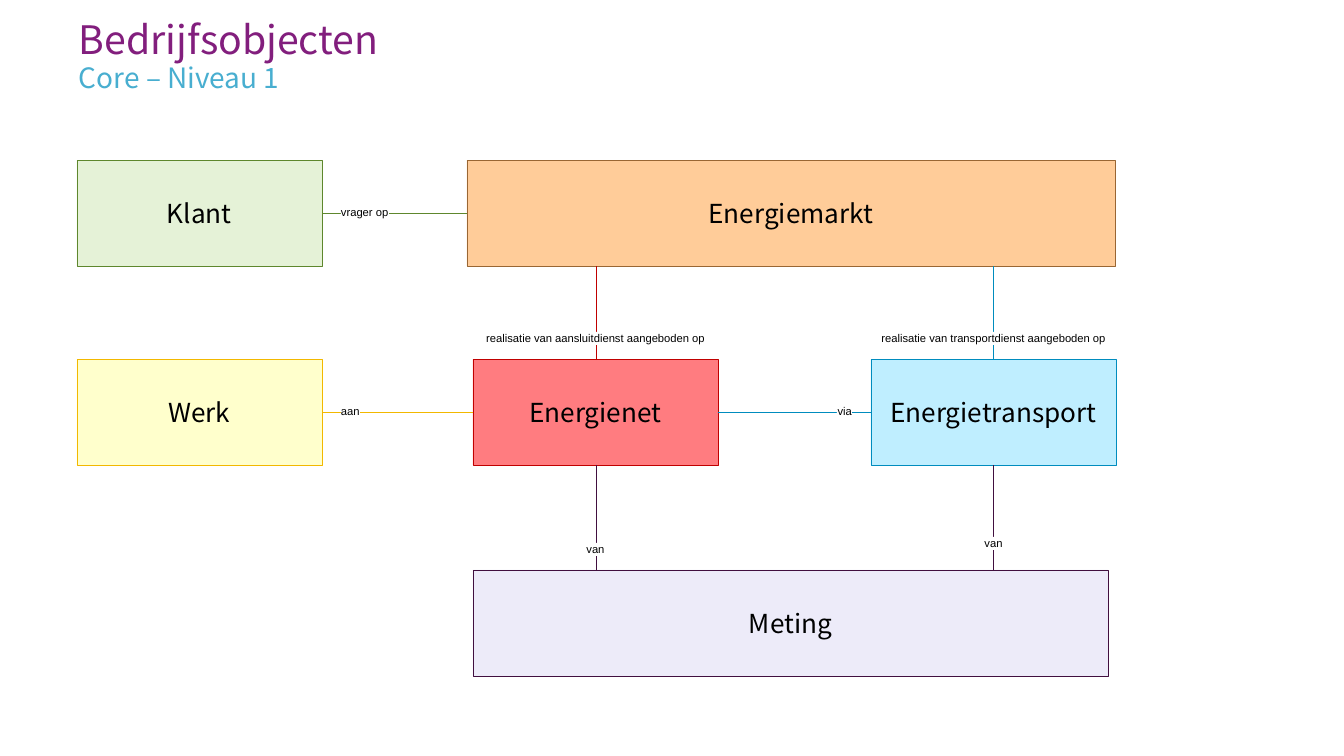
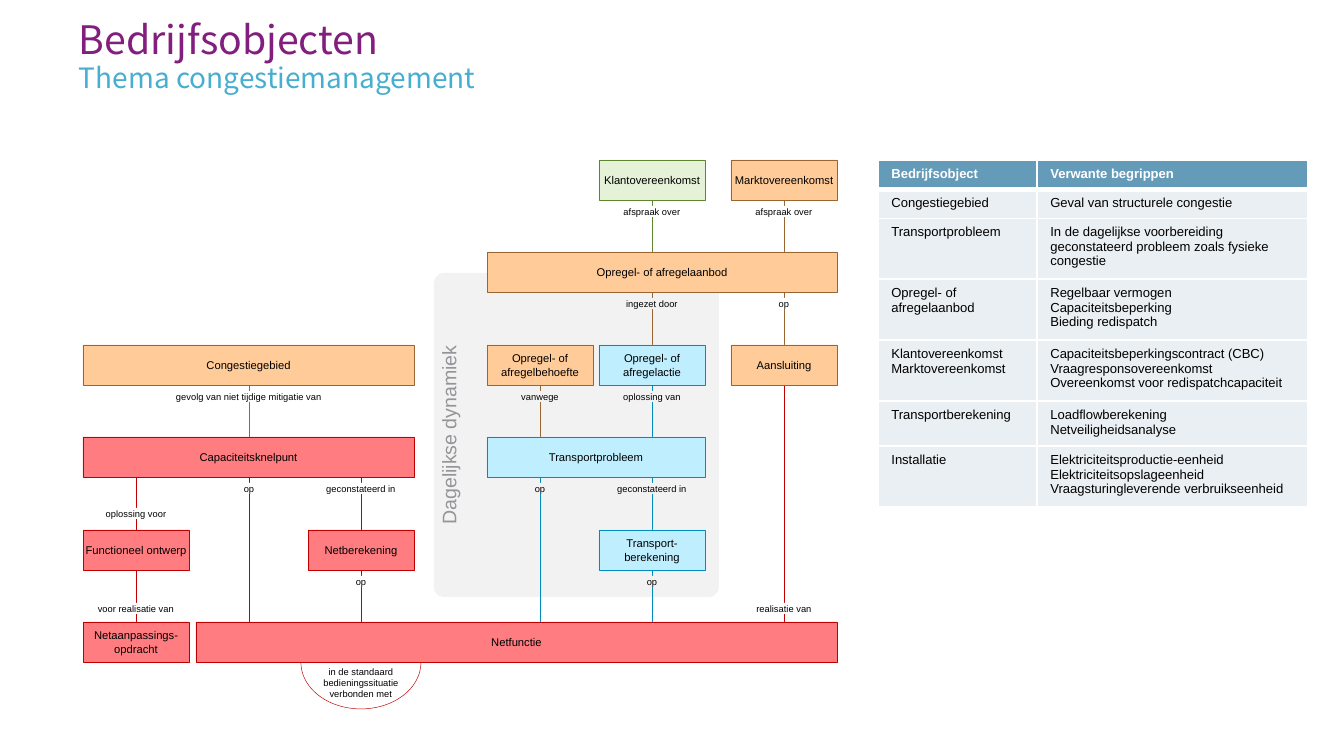
from pptx import Presentation
from pptx import util as u
from pptx.dml.color import RGBColor
from pptx.enum import shapes, text
from pptx.oxml import parse_xml
from pptx.oxml.ns import nsdecls

SCALE = 9144000 / 1344
HEAD_FONT, BODY_FONT = "Noto Sans CJK TC", "Arial"
COLOURS = {
    "white": "FFFFFF", "black": "000000", "purple": "821E7D", "sky": "48AED0",
    "panel": "F2F2F2", "grey": "939598", "header": "649BB9", "cell": "EAEFF3",
    "klant": "E5F2D7", "klant_line": "5E872D",
    "markt": "FFCC99", "markt_line": "996633",
    "net": "FF7C80", "net_line": "C00000",
    "transport": "BFEEFF", "transport_line": "008CBE",
    "meting": "EDEBF9", "meting_line": "410F3F",
    "werk": "FFFFCC", "werk_line": "F2B800",
}
LEFT, CENTER, RIGHT = text.PP_ALIGN.LEFT, text.PP_ALIGN.CENTER, text.PP_ALIGN.RIGHT
TOP, MIDDLE, BOTTOM = text.MSO_ANCHOR.TOP, text.MSO_ANCHOR.MIDDLE, text.MSO_ANCHOR.BOTTOM


def px(value):
    return u.Emu(round(value * SCALE))


def rgb(name):
    return RGBColor.from_string(COLOURS[name])


def assign(target, values):
    for name, value in values.items():
        setattr(target, name, value)


def frame_format(across=0, down=0, anchor=TOP, wrap=True, grow=False):
    fit = text.MSO_AUTO_SIZE
    return {
        "word_wrap": wrap,
        "auto_size": fit.SHAPE_TO_FIT_TEXT if grow else fit.NONE,
        "vertical_anchor": anchor,
        "margin_left": px(across), "margin_right": px(across),
        "margin_top": px(down), "margin_bottom": px(down),
    }


class Diagram:
    """Draws titled object diagrams in one house style."""

    def __init__(self):
        self.deck = Presentation()
        assign(self.deck, {"slide_width": px(1344), "slide_height": px(756)})
        self.page = None

    def new_page(self, title, subtitle):
        self.page = self.deck.slides.add_slide(self.deck.slide_layouts[6])
        self.heading(title, 23, 1297, 52, 21, "purple", u.Pt(21))
        self.heading(subtitle, 54, 1043, 30, 15, "sky", 1.2)

    def fill_text(self, frame, lines, size, font=BODY_FONT, colour="black",
                  bold=False, **layout):
        for index, line in enumerate(lines):
            para = frame.add_paragraph() if index else frame.paragraphs[0]
            assign(para, layout)
            span = para.add_run()
            span.text = line
            assign(span.font, {"name": font, "size": u.Pt(size), "bold": bold})
            span.font.color.rgb = rgb(colour)

    def heading(self, words, top, width, height, size, colour, spacing):
        box = self.page.shapes.add_textbox(px(79), px(top), px(width), px(height))
        assign(box.text_frame, frame_format())
        self.fill_text(box.text_frame, [words], size, HEAD_FONT, colour,
                       line_spacing=spacing)

    def shape(self, kind, left, top, width, height, fill=None, line=None):
        box = self.page.shapes.add_shape(
            kind, px(left), px(top), px(width), px(height))
        box.shadow.inherit = False
        if fill:
            box.fill.solid()
            box.fill.fore_color.rgb = rgb(fill)
        else:
            box.fill.background()
        if line:
            box.line.color.rgb = rgb(line)
            box.line.width = u.Pt(0.25)
        else:
            box.line.fill.background()
        return box

    def block(self, words, left, top, width, height, tone, size=6,
              font=BODY_FONT, margins=(1, 1)):
        box = self.shape(shapes.MSO_SHAPE.RECTANGLE, left, top, width, height,
                         tone, tone + "_line")
        assign(box.text_frame, frame_format(*margins, anchor=MIDDLE))
        self.fill_text(box.text_frame, [words], size, font, alignment=CENTER)

    def label(self, words, left, top, width, height, size, fill="white",
              align=CENTER, anchor=MIDDLE, wrap=True):
        box = self.shape(shapes.MSO_SHAPE.RECTANGLE, left, top, width, height, fill)
        assign(box.text_frame, frame_format(anchor=anchor, wrap=wrap, grow=True))
        self.fill_text(box.text_frame, [words], size, alignment=align)

    def link(self, x1, y1, x2, y2, tone):
        line = self.page.shapes.add_connector(
            shapes.MSO_CONNECTOR.STRAIGHT, px(x1), px(y1), px(x2), px(y2))
        line.line.color.rgb = rgb(tone + "_line")
        line.line.width = u.Pt(0.25)
        line.element.spPr.append(parse_xml(f"<a:effectLst {nsdecls('a')}/>"))

    def panel(self, words, left, top, width, height):
        box = self.shape(shapes.MSO_SHAPE.ROUNDED_RECTANGLE,
                         left, top, width, height, "panel")
        box.adjustments[0] = 0.034
        assign(box.text_frame, frame_format())
        box.element.txBody.bodyPr.set("vert", "vert270")
        self.fill_text(box.text_frame, [words], 10.5, colour="grey",
                       alignment=CENTER)

    def loop(self, words, left, top, width, height, line):
        box = self.shape(shapes.MSO_SHAPE.ARC, left, top, width, height, line=line)
        for index, angle in enumerate((212.73, 109.39)):
            box.adjustments[index] = angle
        assign(box.text_frame, frame_format(13, 7, MIDDLE))
        self.fill_text(box.text_frame, [words], 5, alignment=CENTER)

    def table(self, left, top, widths, rows):
        heights = [14 + 47 * count // 3 for count, *_ in rows]
        grid = self.page.shapes.add_table(
            len(rows), len(widths), px(left), px(top),
            px(sum(widths)), px(sum(heights))).table
        for column, width in zip(grid.columns, widths):
            column.width = px(width)
        for index, (_, *cells) in enumerate(rows):
            grid.rows[index].height = px(heights[index])
            for column, lines in enumerate(cells):
                self.cell(grid.cell(index, column), lines, index)

    def cell(self, cell, lines, index):
        header = index == 0
        for side in "LRTB":
            thick = (index, side) in ((0, "B"), (1, "T"))
            cell._tc.get_or_add_tcPr().append(parse_xml(
                f'<a:ln{side} {nsdecls("a")} w="{u.Pt(3 if thick else 1)}">'
                f'<a:solidFill><a:srgbClr val="{COLOURS["white"]}"/></a:solidFill>'
                f'</a:ln{side}>'))
        cell.fill.solid()
        cell.fill.fore_color.rgb = rgb("header" if header else "cell")
        self.fill_text(cell.text_frame, lines, 7,
                       colour="white" if header else "black", bold=header)


def core_page(diagram):
    diagram.new_page("Bedrijfsobjecten", "Core – Niveau 1")
    width, height = 245, 106
    left, middle, right = 77, 473, 871
    market, work, measure = 160, 359, 570
    for words, x, y, wide, tone in (
        ("Klant", left, market, width, "klant"),
        ("Energienet", middle, work, width, "net"),
        ("Energietransport", right, work, width, "transport"),
        ("Meting", middle, measure, 635, "meting"),
        ("Werk", left, work, width, "werk"),
        ("Energiemarkt", 467, market, 648, "markt"),
    ):
        diagram.block(words, x, y, wide, height, tone, 14, HEAD_FONT, (13, 7))
    for x, tone in ((middle + 123, "net"), (right + 122, "transport")):
        diagram.link(x, work, x, market + height, tone)
        diagram.link(x, work + height, x, measure, "meting")
    for x1, x2, y, tone in (
        (467, left + width, market, "klant"),
        (right, middle + width, work, "transport"),
        (left + width, middle, work, "werk"),
    ):
        diagram.link(x1, y + height // 2, x2, y + height // 2, tone)
    for words, x, y, wide, align in (
        ("aan", 341, 405, 19, LEFT),
        ("via", 837, 405, 15, RIGHT),
        ("vrager op", 341, 206, 48, LEFT),
        ("realisatie van transportdienst aangeboden op", right, 332, width, CENTER),
        ("realisatie van aansluitdienst aangeboden op", middle, 332, width, CENTER),
        ("van", middle, 543, width, CENTER),
        ("van", right, 537, width, CENTER),
    ):
        diagram.label(words, x, y, wide, 13, 6, align=align, anchor=BOTTOM,
                      wrap=align == CENTER)


def congestion_page(diagram):
    diagram.new_page("Bedrijfsobjecten", "Thema congestiemanagement")
    columns = [83, 196, 308, 487, 599, 731]
    rows = [160 + 185 * row // 2 for row in range(6)]
    width, height = 106, 40
    diagram.panel("Dagelijkse dynamiek", 434, 273, 285, 324)
    diagram.loop("in de standaard bedieningssituatie verbonden met",
                 301, 616, 120, 93, "net_line")
    for column, start, end, tone in (
        (3, 3, 5, "transport"), (4, 1, 2, "markt"), (3, 2, 3, "markt"),
        (5, 0, 1, "markt"), (2, 3, 4, "net"), (4, 0, 1, "klant"),
        (5, 1, 2, "markt"), (1, 2, 3, "markt"), (4, 3, 4, "transport"),
        (4, 2, 3, "transport"), (1, 3, 5, "net"), (5, 2, 5, "net"),
        (2, 4, 5, "net"), (4, 4, 5, "transport"), (0, 3, 4, "net"),
        (0, 4, 5, "net"),
    ):
        x = columns[column] + width // 2
        diagram.link(x, rows[start] + height, x, rows[end], tone)
    for words, first, last, row, tone in (
        ("Klantovereenkomst", 4, 4, 0, "klant"),
        ("Marktovereenkomst", 5, 5, 0, "markt"),
        ("Opregel- of afregelaanbod", 3, 5, 1, "markt"),
        ("Congestiegebied", 0, 2, 2, "markt"),
        ("Opregel- of afregelbehoefte", 3, 3, 2, "markt"),
        ("Opregel- of afregelactie", 4, 4, 2, "transport"),
        ("Aansluiting", 5, 5, 2, "markt"),
        ("Capaciteitsknelpunt", 0, 2, 3, "net"),
        ("Transportprobleem", 3, 4, 3, "transport"),
        ("Functioneel ontwerp", 0, 0, 4, "net"),
        ("Netberekening", 2, 2, 4, "net"),
        ("Transport-berekening", 4, 4, 4, "transport"),
        ("Netaanpassings-opdracht", 0, 0, 5, "net"),
        ("Netfunctie", 1, 5, 5, "net"),
    ):
        wide = columns[last] - columns[first] + width
        diagram.block(words, columns[first], rows[row], wide, height, tone)
    below = [row + height + 6 for row in rows]
    for words, column, y, wide, fill in (
        ("afspraak over", 4, below[0], width, "white"),
        ("afspraak over", 5, below[0], width, "white"),
        ("ingezet door", 4, below[1], width, "panel"),
        ("op", 5, below[1], 40, "white"),
        ("gevolg van niet tijdige mitigatie van", 1, below[2], 158, "white"),
        ("vanwege", 3, below[2], width, "panel"),
        ("oplossing van", 4, below[2], width, "panel"),
        ("op", 1, below[3], width, "white"),
        ("geconstateerd in", 2, below[3], width, "white"),
        ("op", 3, below[3], width, "panel"),
        ("geconstateerd in", 4, below[3], width, "panel"),
        ("oplossing voor", 0, 508, 68, "white"),
        ("op", 2, below[4], width, "white"),
        ("op", 4, below[4], width, "panel"),
        ("voor realisatie van", 0, 603, width, "white"),
        ("realisatie van", 5, 603, 66, "white"),
    ):
        x = columns[column] + (width - wide) // 2
        diagram.label(words, x, y, wide, 11, 5, fill)
    diagram.table(878, 160, (159, 271), (
        (1, ["Bedrijfsobject"], ["Verwante begrippen"]),
        (1, ["Congestiegebied"], ["Geval van structurele congestie"]),
        (3, ["Transportprobleem"],
         ["In de dagelijkse voorbereiding geconstateerd probleem zoals "
          "fysieke congestie"]),
        (3, ["Opregel- of afregelaanbod"],
         ["Regelbaar vermogen", "Capaciteitsbeperking", "Bieding redispatch"]),
        (3, ["Klantovereenkomst", "Marktovereenkomst"],
         ["Capaciteitsbeperkingscontract (CBC)", "Vraagresponsovereenkomst",
          "Overeenkomst voor redispatchcapaciteit"]),
        (2, ["Transportberekening"],
         ["Loadflowberekening", "Netveiligheidsanalyse"]),
        (3, ["Installatie"],
         ["Elektriciteitsproductie-eenheid", "Elektriciteitsopslageenheid",
          "Vraagsturingleverende verbruikseenheid"]),
    ))


def main():
    diagram = Diagram()
    core_page(diagram)
    congestion_page(diagram)
    diagram.deck.save("out.pptx")


if __name__ == "__main__":
    main()
